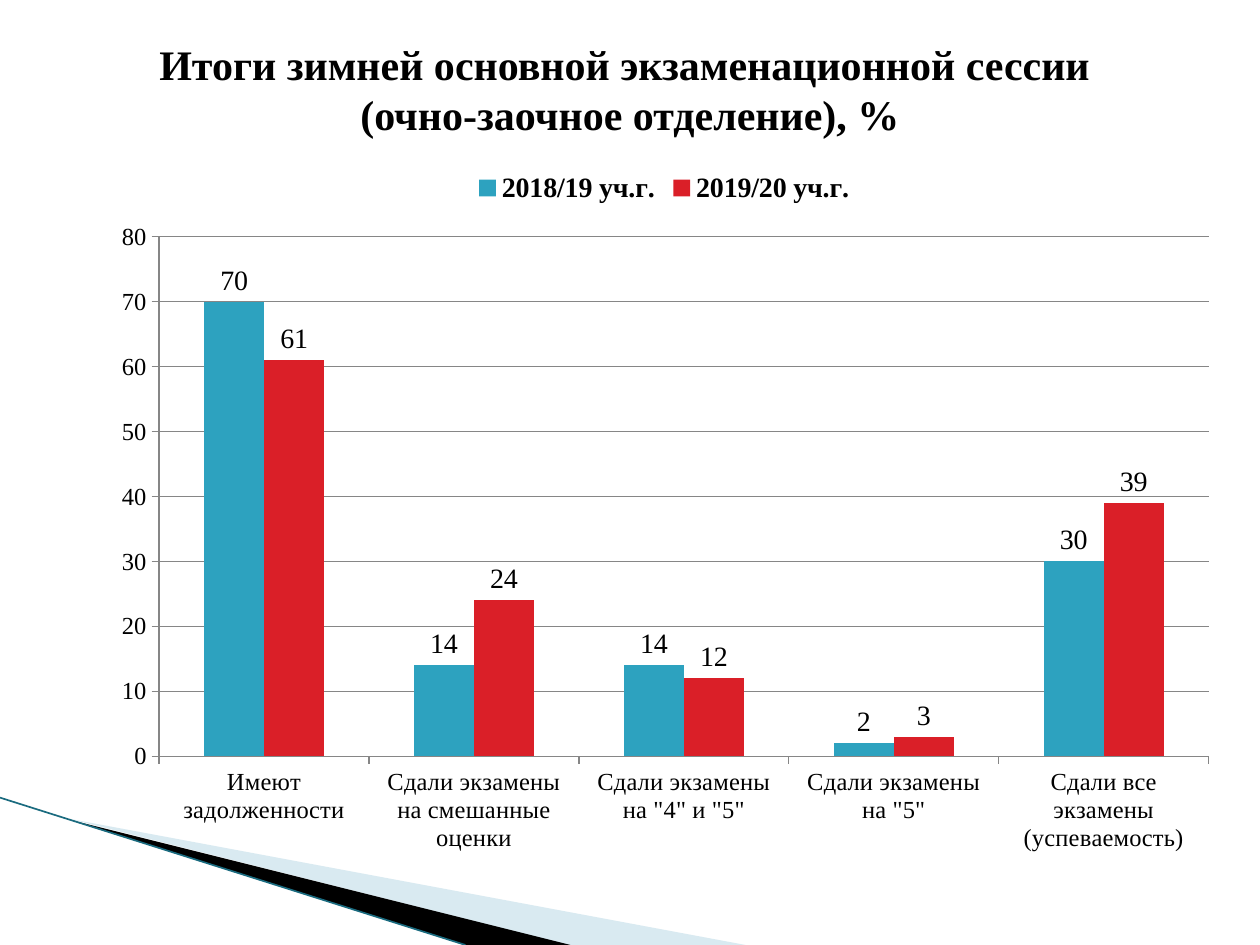
from dataclasses import dataclass

from lxml import etree
from pptx import Presentation
from pptx.chart.data import CategoryChartData
from pptx.dml.color import RGBColor
from pptx.enum.chart import XL_CHART_TYPE, XL_LABEL_POSITION, XL_LEGEND_POSITION, XL_TICK_MARK
from pptx.enum.shapes import MSO_CONNECTOR
from pptx.enum.text import MSO_ANCHOR, PP_ALIGN
from pptx.oxml.ns import qn
from pptx.util import Pt

CLUSTERED = XL_CHART_TYPE.COLUMN_CLUSTERED
OUTSIDE_END = XL_LABEL_POSITION.OUTSIDE_END
LEGEND_TOP = XL_LEGEND_POSITION.TOP
TICK_OUTSIDE = XL_TICK_MARK.OUTSIDE
STRAIGHT = MSO_CONNECTOR.STRAIGHT
MIDDLE = MSO_ANCHOR.MIDDLE
CENTER = PP_ALIGN.CENTER


@dataclass(frozen=True)
class Theme:
    font: str = "Times New Roman"
    ink: str = "000000"
    paper: str = "FFFFFF"
    pale: str = "A0CBDC"
    edge: str = "1A6B7F"
    grid: str = "868686"
    title_size: float = 24
    label_size: float = 16
    axis_size: float = 14


@dataclass(frozen=True)
class Box:
    left: float
    top: float
    width: float
    height: float

    def lengths(self) -> tuple:
        return Pt(self.left), Pt(self.top), Pt(self.width), Pt(self.height)


@dataclass(frozen=True)
class Wedge:
    points: tuple
    color: str
    opacity: int = 100


@dataclass(frozen=True)
class Series:
    name: str
    values: tuple
    color: str


THEME = Theme()
TITLE = "Итоги зимней основной экзаменационной сессии \v(очно-заочное отделение), %"
WEDGES = (
    Wedge(((39.6, 468), (426, 540), (325, 540)), THEME.pale, 40),
    Wedge(((38, 467.5), (326, 540), (266, 540)), THEME.ink),
)
CATEGORIES = (
    "Имеют задолженности",
    "Сдали экзамены на смешанные оценки",
    'Сдали экзамены на "4" и "5"',
    'Сдали экзамены на "5"',
    "Сдали все экзамены (успеваемость)",
)
SERIES = (
    Series("2018/19 уч.г.", (70, 14, 14, 2, 30), "2DA2BF"),
    Series("2019/20 уч.г.", (61, 24, 12, 3, 39), "DA1F28"),
)
PLOT_LAYOUT = {"x": 0.054, "y": 0.112, "w": 0.927, "h": 0.733}


def rgb(color: str) -> RGBColor:
    return RGBColor.from_string(color)


def style_font(font, size: float, bold: bool = False) -> None:
    font.name = THEME.font
    font.size = Pt(size)
    font.bold = bold
    font.color.rgb = rgb(THEME.ink)


def add_text(page, text: str, *, box: Box, size: float, bold: bool = False,
             align=CENTER, anchor=MIDDLE) -> None:
    frame = page.shapes.add_textbox(*box.lengths()).text_frame
    frame.word_wrap = True
    frame.vertical_anchor = anchor
    para = frame.paragraphs[0]
    para.text = text
    para.alignment = align
    for span in para.runs:
        style_font(span.font, size, bold)


def add_wedge(page, wedge: Wedge) -> None:
    start, *others = wedge.points
    builder = page.shapes.build_freeform(*start, scale=Pt(1))
    builder.add_line_segments(others, close=True)
    shape = builder.convert_to_shape()
    shape.shadow.inherit = False
    shape.line.fill.background()
    shape.fill.solid()
    shape.fill.fore_color.rgb = rgb(wedge.color)
    if wedge.opacity < 100:
        color = shape.fill._xPr.find(".//" + qn("a:srgbClr"))
        etree.SubElement(color, qn("a:alpha"), val=str(wedge.opacity * 1000))


def add_edge(page, start: tuple, end: tuple) -> None:
    edge = page.shapes.add_connector(STRAIGHT, *map(Pt, start + end))
    edge.line.color.rgb = rgb(THEME.edge)
    edge.line.width = Pt(0.95)
    etree.SubElement(edge._element.spPr, qn("a:effectLst"))


def fix_plot_area(chart) -> None:
    """Give the inner plot area a fixed place, in fractions of the chart."""
    area = chart._chartSpace.chart.plotArea
    for old in area.findall(qn("c:layout")):
        area.remove(old)
    layout = etree.Element(qn("c:layout"))
    area.insert(0, layout)
    manual = etree.SubElement(layout, qn("c:manualLayout"))
    etree.SubElement(manual, qn("c:layoutTarget"), val="inner")
    for side in ("x", "y"):
        etree.SubElement(manual, qn(f"c:{side}Mode"), val="edge")
    for side, share in PLOT_LAYOUT.items():
        etree.SubElement(manual, qn(f"c:{side}"), val=str(share))


def style_axis(axis) -> None:
    axis.major_tick_mark = TICK_OUTSIDE
    style_font(axis.tick_labels.font, THEME.axis_size)
    axis.format.line.color.rgb = rgb(THEME.grid)
    axis.format.line.width = Pt(0.75)


def add_results_chart(page, box: Box) -> None:
    data = CategoryChartData()
    data.categories = CATEGORIES
    for series in SERIES:
        data.add_series(series.name, series.values)
    chart = page.shapes.add_chart(CLUSTERED, *box.lengths(), data).chart
    style_font(chart.font, THEME.axis_size)
    chart.has_title = False
    chart.has_legend = True
    chart.legend.position = LEGEND_TOP
    chart.legend.include_in_layout = False
    style_font(chart.legend.font, THEME.label_size, bold=True)
    fix_plot_area(chart)

    style_axis(chart.category_axis)
    value_axis = chart.value_axis
    style_axis(value_axis)
    value_axis.minimum_scale = 0
    value_axis.maximum_scale = 80
    value_axis.major_unit = 10
    value_axis.has_major_gridlines = True
    grid = value_axis.major_gridlines.format.line
    grid.color.rgb = rgb(THEME.grid)
    grid.width = Pt(0.75)

    plot = chart.plots[0]
    plot.gap_width = 150
    plot.overlap = 0
    plot.vary_by_categories = False
    for bars, series in zip(plot.series, SERIES):
        bars.format.fill.solid()
        bars.format.fill.fore_color.rgb = rgb(series.color)
        bars.invert_if_negative = False
        labels = bars.data_labels
        labels.show_value = True
        labels.position = OUTSIDE_END
        style_font(labels.font, THEME.label_size)


def main() -> None:
    deck = Presentation()
    deck.slide_width, deck.slide_height = Pt(720), Pt(540)
    page = deck.slides.add_slide(deck.slide_layouts[6])
    page.background.fill.solid()
    page.background.fill.fore_color.rgb = rgb(THEME.paper)
    for wedge in WEDGES:
        add_wedge(page, wedge)
    add_edge(page, (0, 455.8), (266, 540))
    add_text(page, TITLE, box=Box(36, 22, 648, 57), size=THEME.title_size, bold=True)
    add_results_chart(page, Box(56, 90, 647, 405))
    deck.save("out.pptx")


if __name__ == "__main__":
    main()
